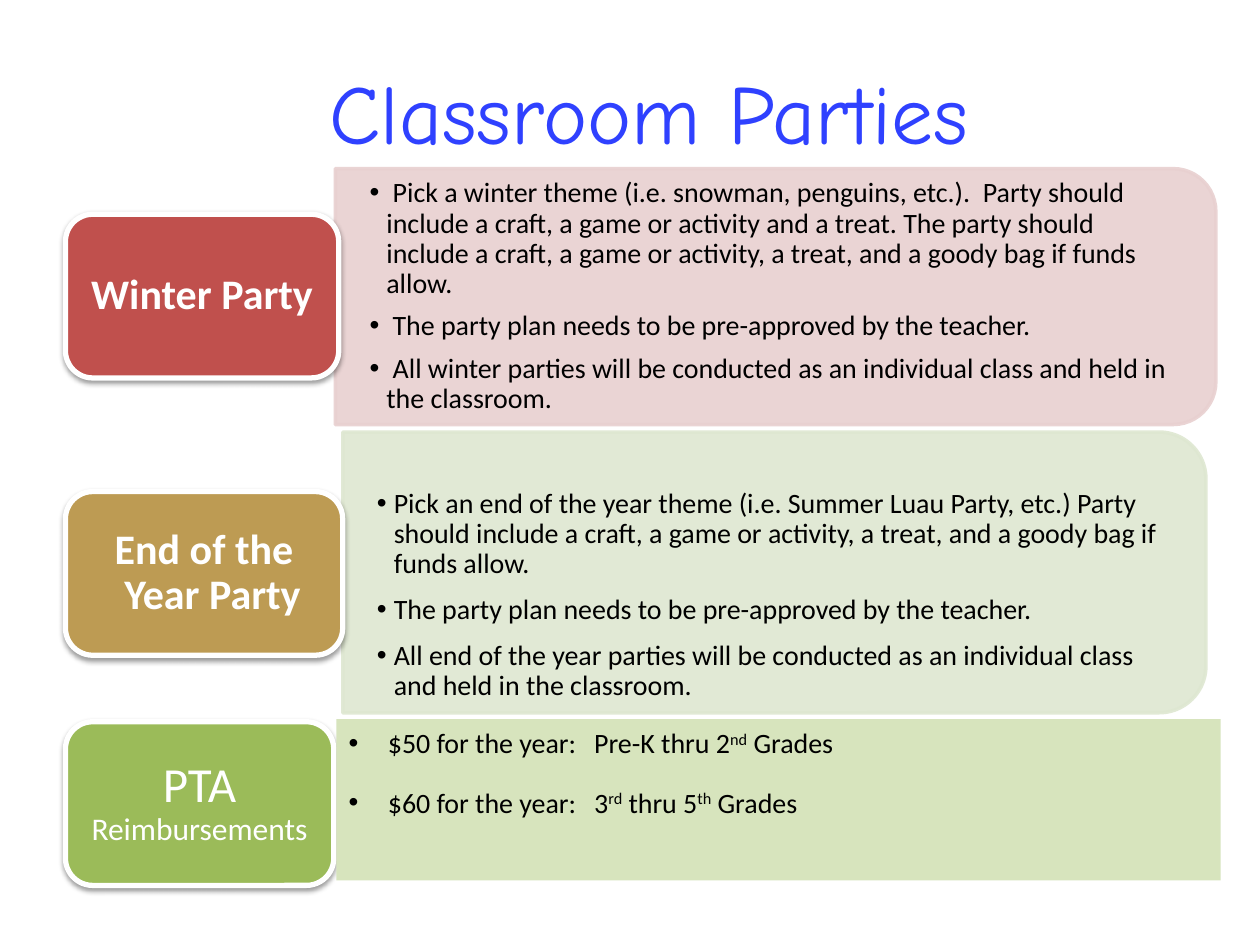
import pptx
import pptx.dml.color
import pptx.enum.shapes
import pptx.enum.text
import pptx.oxml
import pptx.oxml.ns
import pptx.util
from pptx.util import Cm, Pt

SHAPE = pptx.enum.shapes.MSO_SHAPE
ANCHOR = pptx.enum.text.MSO_ANCHOR
ALIGN = pptx.enum.text.PP_ALIGN
A_NS = pptx.oxml.ns.nsdecls("a")
BLACK, WHITE = "000000", "FFFFFF"


def color(hex_string):
    return pptx.dml.color.RGBColor.from_string(hex_string)


def xml(markup):
    """Parse an element whose tag carries the a: prefix."""
    head, rest = markup.split(" ", 1)
    return pptx.oxml.parse_xml(f"{head} {A_NS} {rest}")


class PartySlide:
    font = "Calibri"
    body_size = 16

    def __init__(self, slide):
        self.slide = slide

    def shape(self, kind, box, fill, outline=None, width=0):
        shape = self.slide.shapes.add_shape(kind, *map(Cm, box))
        shape.shadow.inherit = False
        shape.fill.solid()
        shape.fill.fore_color.rgb = color(fill)
        if outline:
            shape.line.color.rgb = color(outline)
            shape.line.width = Pt(width)
        else:
            shape.line.fill.background()
        return shape

    def frame(self, holder, anchor, left, top, right, bottom):
        frame = holder.text_frame
        frame.word_wrap = True
        frame.vertical_anchor = anchor
        frame.margin_left, frame.margin_top = Cm(left), Cm(top)
        frame.margin_right, frame.margin_bottom = Cm(right), Cm(bottom)
        return frame

    def style(self, paragraph, size, text_color, align, bold=False, font=None):
        paragraph.alignment = align
        paragraph.font.name = font or self.font
        paragraph.font.size = Pt(size)
        paragraph.font.bold = bold
        paragraph.font.color.rgb = color(text_color)

    def hang(self, paragraph, indent):
        properties = paragraph._p.get_or_add_pPr()
        properties.set("marL", str(Cm(indent)))
        properties.set("indent", str(-Cm(indent)))
        return properties

    def bullets(self, frame, items, indent, after, before=0, line=1.0, tab=None):
        """Each item is a list of strings; every second one is superscript."""
        for number, parts in enumerate(items):
            paragraph = frame.add_paragraph() if number else frame.paragraphs[0]
            self.style(paragraph, self.body_size, BLACK, ALIGN.LEFT)
            paragraph.line_spacing = line
            paragraph.space_before, paragraph.space_after = Pt(before), Pt(after)
            properties = self.hang(paragraph, indent)
            marks = [xml('<a:buFont typeface="Arial"/>'), xml('<a:buChar char="•"/>')]
            if tab:
                marks.append(xml(f'<a:tabLst ><a:tab pos="{Cm(tab)}" algn="l"/></a:tabLst>'))
            default_run = properties.find(pptx.oxml.ns.qn("a:defRPr"))
            for mark in marks:
                default_run.addprevious(mark)
            for position, part in enumerate(parts):
                run = paragraph.add_run()
                run.text = part
                if position % 2:
                    run._r.get_or_add_rPr().set("baseline", "30000")

    def title(self, box, text, shift):
        holder = self.slide.shapes.add_textbox(*map(Cm, box))
        frame = self.frame(holder, ANCHOR.MIDDLE, 0.25 + shift, 0.13, 0.25, 0.13)
        frame.text = text
        self.style(frame.paragraphs[0], 47.8, "2F41FF", ALIGN.CENTER, font="Comic Neue")

    def panel(self, box, fill, items, after, extra_top=0):
        """Rounded on the right: a shape with round top corners, turned 90 degrees."""
        left, top, width, height = box
        turned = (left + (width - height) / 2, top + (height - width) / 2, height, width)
        panel = self.shape(SHAPE.ROUND_2_SAME_RECTANGLE, turned, fill, fill, 2)
        panel.rotation = 90
        for tint in panel._element.spPr.iter(pptx.oxml.ns.qn("a:srgbClr")):
            tint.append(xml('<a:alpha val="90000"/>'))
        inset = 0.25
        holder = self.slide.shapes.add_textbox(
            Cm(left), Cm(top + inset), Cm(width - inset), Cm(height - 2 * inset))
        frame = self.frame(holder, ANCHOR.MIDDLE, 0.69, 0.34 + extra_top, 0.69, 0.34)
        self.bullets(frame, items, 0.34, after, line=0.9)

    def label(self, top, width, fill, runs, bold=False, indent=0):
        label = self.shape(SHAPE.ROUNDED_RECTANGLE, (1.32, top, width, 3.3), fill, WHITE, 3)
        label._element.spPr.find(pptx.oxml.ns.qn("a:effectLst")).append(xml(
            f'<a:outerShdw blurRad="{Pt(3.1)}" dist="{Pt(1.6)}" dir="5400000" rotWithShape="0">'
            '<a:srgbClr val="000000"><a:alpha val="38000"/></a:srgbClr></a:outerShdw>'))
        frame = self.frame(label, ANCHOR.MIDDLE, 0.18, 0.08, 0.18, 0.08)
        paragraph = frame.paragraphs[0]
        self.style(paragraph, runs[0][1], WHITE, ALIGN.CENTER, bold)
        paragraph.line_spacing = 0.9
        self.hang(paragraph, indent)
        for text, size in runs:
            run = paragraph.add_run()
            run.text = text
            run.font.size = Pt(size)

    def reimbursements(self, box, fill, items):
        holder = self.shape(SHAPE.RECTANGLE, box, fill)
        frame = self.frame(holder, ANCHOR.TOP, 0.25, 0.13, 0.25, 0.13)
        self.bullets(frame, items, 0.79, after=8.9, before=6, tab=4.95)


def main():
    deck = pptx.Presentation()
    deck.slide_width, deck.slide_height = Cm(25.4), Cm(19.05)
    parties = PartySlide(deck.slides.add_slide(deck.slide_layouts[6]))

    parties.panel((6.76, 3.4, 17.75, 5.16), "E8D0D0", [
        [" Pick a winter theme (i.e. snowman, penguins, etc.).  Party should include a craft, "
         "a game or activity and a treat. The party should include a craft, a game or activity, "
         "a treat, and a goody bag if funds allow."],
        [" The party plan needs to be pre-approved by the teacher."],
        [" All winter parties will be conducted as an individual class and held in the classroom."],
    ], after=7)
    parties.label(4.32, 5.51, "C0504D", [("Winter Party", 24)], bold=True, indent=0.34)

    parties.panel((6.91, 8.71, 17.4, 5.66), "DEE7D1", [
        ["Pick an end of the year theme (i.e. Summer Luau Party, etc.) Party should include "
         "a craft, a game or activity, a treat, and a goody bag if funds allow."],
        ["The party plan needs to be pre-approved by the teacher."],
        ["All end of the year parties will be conducted as an individual class "
         "and held in the classroom."],
    ], after=8.9, extra_top=0.93)
    parties.label(9.91, 5.59, "BD9B53", [("End of the Year Party", 24)], bold=True, indent=0.34)

    parties.label(14.55, 5.41, "9BBB59", [("PTA", 28), (" Reimbursements", 18)])
    parties.title((0.43, 0.43, 23.7, 3.61), "Classroom Parties", shift=1.6)
    parties.reimbursements((6.78, 14.5, 17.83, 3.25), "D7E4BD", [
        ["$50 for the year:\tPre-K thru 2", "nd", " Grades"],
        ["$60 for the year:\t3", "rd", " thru 5", "th", " Grades"],
    ])
    deck.save("out.pptx")


if __name__ == "__main__":
    main()
